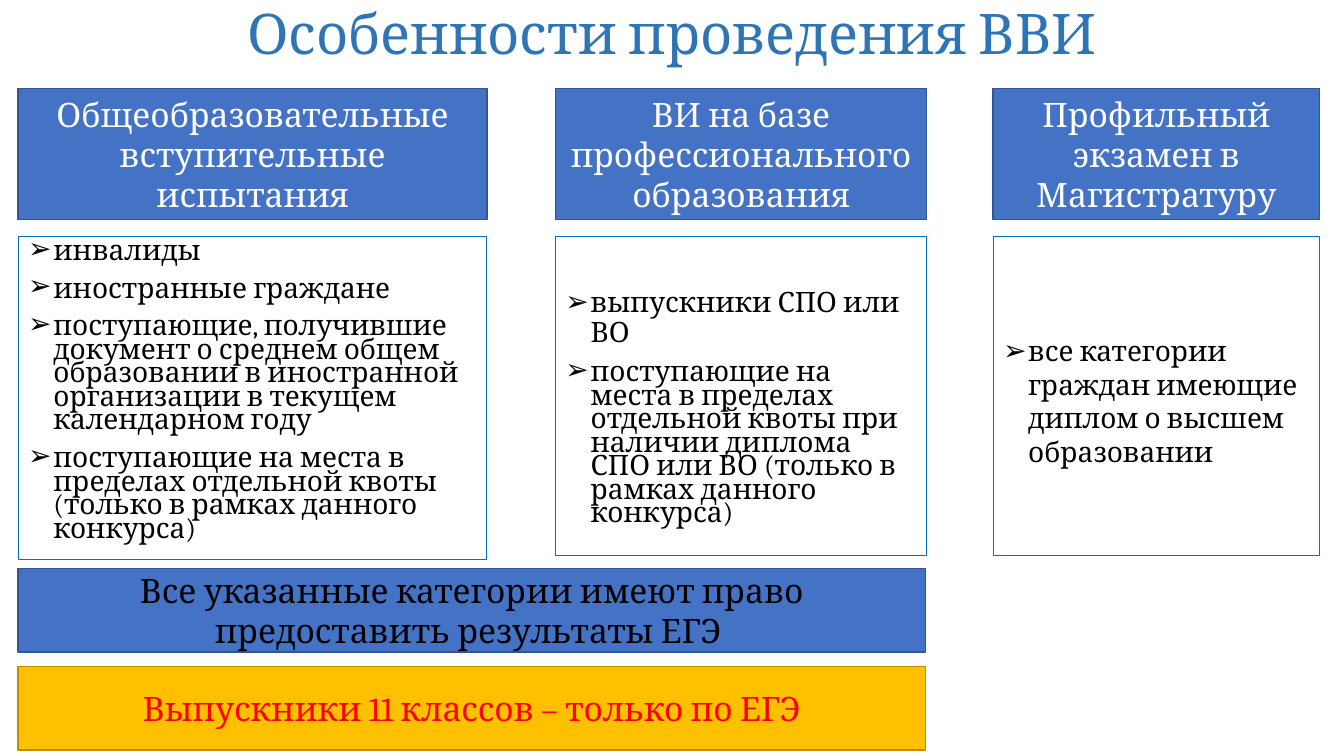
from lxml.etree import SubElement as Sub
from pptx import Presentation
from pptx.dml.color import RGBColor as RGB
from pptx.enum.shapes import MSO_SHAPE as Kind
from pptx.enum.text import MSO_ANCHOR as Anchor, MSO_AUTO_SIZE as Fit, PP_ALIGN as Align
from pptx.oxml.ns import qn
from pptx.util import Pt

PX = 9144
WHITE = RGB(0xFF, 0xFF, 0xFF)
BLACK = RGB(0, 0, 0)
RED = RGB(0xFF, 0, 0)
TITLE = RGB(0x2E, 0x75, 0xB6)
BLUE = RGB(0x44, 0x72, 0xC4)
NAVY = RGB(0x32, 0x54, 0x91)
GOLD = RGB(0xFF, 0xC0, 0)
BROWN = RGB(0xBD, 0x8E, 0)
EDGE = RGB(0, 0x70, 0xC0)


class Deck:
    """Holds the text style and the slide, and adds each kind of element."""

    face = "Cambria"

    def __init__(self, wide, high):
        self.file = Presentation()
        self.file.slide_width = wide * PX
        self.file.slide_height = high * PX
        self.slide = self.file.slides.add_slide(self.file.slide_layouts[1])

    def put(self, obj, form):
        for key, val in form.items():
            setattr(obj, key, val)

    def place(self, shape, box):
        self.put(shape, dict(zip(("left", "top", "width", "height"), (n * PX for n in box))))

    def frame(self, shape, fill, edge, wide):
        if fill is None:
            shape.fill.background()
        else:
            shape.fill.solid()
            shape.fill.fore_color.rgb = fill
        shape.line.color.rgb = edge
        shape.line.width = Pt(wide)

    def rect(self, box):
        shape = self.slide.shapes.add_shape(Kind.RECTANGLE, *(n * PX for n in box))
        shape.shadow.inherit = False
        return shape

    def ink(self, para, size, color):
        self.put(para.font, {"name": self.face, "size": Pt(size)})
        para.font.color.rgb = color

    def label(self, shape, text, size, color, space=1.0):
        self.put(shape.text_frame, {"word_wrap": True, "auto_size": Fit.NONE,
                                    "vertical_anchor": Anchor.MIDDLE})
        para = shape.text_frame.paragraphs[0]
        self.put(para, {"text": text, "alignment": Align.CENTER, "line_spacing": space})
        self.ink(para, size, color)

    def title(self, text, box):
        shape = self.slide.shapes.title
        self.place(shape, box)
        self.label(shape, text, 40, TITLE, 0.9)

    def panel(self, box, text, color, fill, edge):
        shape = self.rect(box)
        self.frame(shape, fill, edge, 1)
        self.label(shape, text, 24, color)

    def list(self, shape, rows, inset):
        self.frame(shape, None, EDGE, 0.75)
        body = shape.text_frame
        self.put(body, {"word_wrap": True, "auto_size": Fit.NONE,
                        "vertical_anchor": Anchor.TOP, "margin_top": inset * PX})
        for num, (text, space) in enumerate(rows):
            para = body.add_paragraph() if num else body.paragraphs[0]
            self.put(para, {"text": text, "alignment": Align.LEFT, "line_spacing": space,
                            "space_before": Pt(10 if num else 0)})
            prop = para._p.get_or_add_pPr()
            prop.set("marL", str(25 * PX))
            prop.set("indent", str(-25 * PX))
            Sub(prop, qn("a:buFont")).set("typeface", "Arial")
            Sub(prop, qn("a:buChar")).set("char", "➢")
            self.ink(para, 20, BLACK)


def main():
    deck = Deck(1333, 750)
    deck.title("Особенности проведения ВВИ", (0, 0, 1333, 72))
    cols = [
        (18, 465, 320, 5, "Общеобразовательные вступительные испытания", [
            ("инвалиды", 0.7),
            ("иностранные граждане", 0.7),
            ("поступающие, получившие документ о среднем общем образовании "
             "в иностранной организации в текущем календарном году", 0.7),
            ("поступающие на места в пределах отдельной квоты "
             "(только в рамках данного конкурса)", 0.7)]),
        (551, 368, 316, 51, "ВИ на базе профессионального образования", [
            ("выпускники СПО или ВО", 0.9),
            ("поступающие на места в пределах отдельной квоты при наличии "
             "диплома СПО или ВО (только в рамках данного конкурса)", 0.7)]),
        (985, 324, 316, 96, "Профильный экзамен в Магистратуру", [
            ("все категории граждан имеющие диплом о высшем образовании", 1.0)]),
    ]
    for num, (left, wide, high, inset, head, rows) in enumerate(cols):
        deck.panel((left, 88, wide, 130), head, WHITE, BLUE, NAVY)
        box = (left, 235, wide, high)
        if num:
            shape = deck.rect(box)
        else:
            shape = deck.slide.placeholders[1]
            deck.place(shape, box)
        deck.list(shape, rows, inset)
    bars = [
        ("Все указанные категории имеют право предоставить результаты ЕГЭ ", BLACK, BLUE, NAVY),
        ("Выпускники 11 классов – только по ЕГЭ", RED, GOLD, BROWN),
    ]
    for num, bar in enumerate(bars):
        deck.panel((18, 564 + 97 * num, 900, 83), *bar)
    deck.file.save("out.pptx")


if __name__ == "__main__":
    main()
